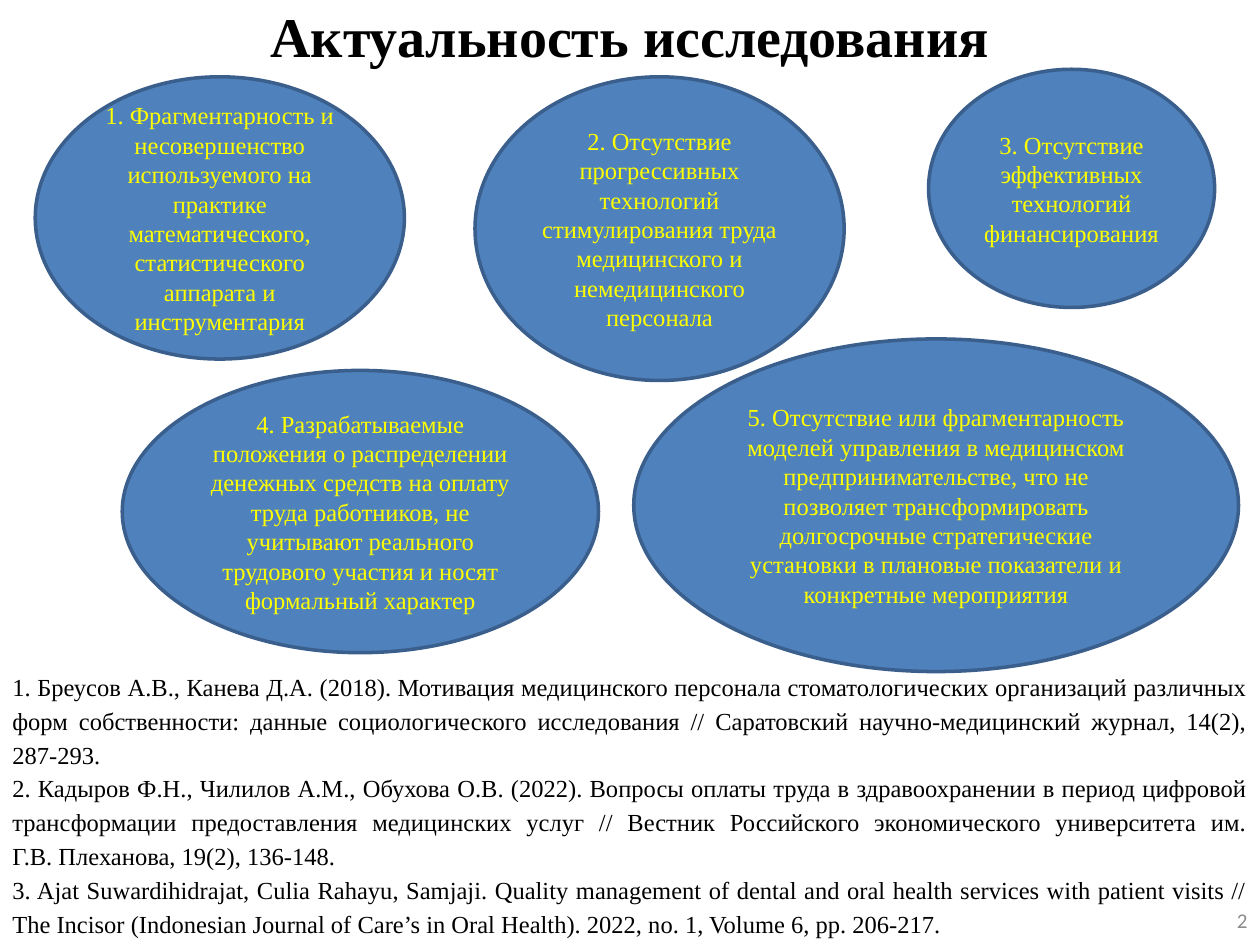
from lxml import etree
from pptx import Presentation
from pptx import util as u
from pptx.dml.color import RGBColor
from pptx.enum import shapes, text
from pptx.oxml import ns

SERIF = "Times New Roman"
TITLE = "Актуальность исследования"
PAGE = "2"

# left, top, width, height, wording; listed from back to front
OVALS = [
    (5.03, 2.69, 4.8, 2.64, "5. Отсутствие или фрагментарность моделей управления в медицинском предпринимательстве, что не позволяет трансформировать долгосрочные стратегические установки в плановые показатели и конкретные мероприятия"),
    (0.97, 2.94, 3.78, 2.24, "4. Разрабатываемые положения о распределении денежных средств на оплату труда работников, не учитывают реального трудового участия и носят формальный характер"),
    (7.37, 0.55, 2.27, 1.89, "3. Отсутствие эффективных технологий финансирования "),
    (0.28, 0.61, 2.93, 2.24, "1. Фрагментарность и несовершенство используемого на практике математического, статистического аппарата и инструментария"),
    (3.77, 0.61, 2.93, 2.41, "2. Отсутствие прогрессивных технологий стимулирования труда медицинского и немедицинского персонала"),
]

# Numbered automatically
REFS = [
    " Бреусов А.В., Канева Д.А. (2018). Мотивация медицинского персонала стоматологических организаций различных форм собственности: данные социологического исследования // Саратовский научно-медицинский журнал, 14(2), 287-293.",
    " Кадыров Ф.Н., Чилилов А.М., Обухова О.В. (2022). Вопросы оплаты труда в здравоохранении в период цифровой трансформации предоставления медицинских услуг // Вестник Российского экономического университета им.\nГ.В. Плеханова, 19(2), 136-148.",
    " Ajat Suwardihidrajat, Culia Rahayu, Samjaji. Quality management of dental and oral health services with patient visits // The Incisor (Indonesian Journal of Care’s in Oral Health). 2022, no. 1, Volume 6, pp. 206-217.",
]


def paint(hue):
    return RGBColor.from_string(hue)


def style(para, size, hue, align, face=SERIF, bold=False):
    para.alignment = align
    font = para.font
    font.name, font.size, font.bold = face, u.Pt(size), bold
    font.color.rgb = paint(hue)


def add_box(slide, area, anchor):
    frame = slide.shapes.add_textbox(*map(u.Inches, area)).text_frame
    frame.word_wrap = True
    frame.vertical_anchor = anchor
    return frame


def add_oval(slide, area, words):
    oval = slide.shapes.add_shape(
        shapes.MSO_SHAPE.FLOWCHART_CONNECTOR, *map(u.Inches, area))
    oval.shadow.inherit = False
    oval.fill.solid()
    oval.fill.fore_color.rgb = paint("4F81BD")
    oval.line.color.rgb = paint("3A5F8C")
    oval.line.width = u.Pt(2)
    frame = oval.text_frame
    frame.word_wrap = True
    frame.vertical_anchor = text.MSO_ANCHOR.MIDDLE
    para = frame.paragraphs[0]
    para.text = words
    style(para, 14, "FFFF00", text.PP_ALIGN.CENTER)


def add_refs(slide, area):
    frame = add_box(slide, area, text.MSO_ANCHOR.TOP)
    for i, words in enumerate(REFS):
        para = frame.add_paragraph() if i else frame.paragraphs[0]
        para.text = words
        para.line_spacing = 1.15
        # Automatic number with no hanging indent
        props = para._p.get_or_add_pPr()
        props.set("marL", "0")
        props.set("indent", "0")
        etree.SubElement(props, ns.qn("a:buAutoNum"), type="arabicPeriod")
        style(para, 14, "000000", text.PP_ALIGN.JUSTIFY)


def main():
    deck = Presentation()
    deck.slide_width, deck.slide_height = u.Inches(10), u.Inches(7.5)
    slide = deck.slides.add_slide(deck.slide_layouts[6])

    # Title and page number
    middle = text.MSO_ANCHOR.MIDDLE
    head = add_box(slide, (0, -0.02, 10, 0.59), middle).paragraphs[0]
    head.text = TITLE
    style(head, 32, "000000", text.PP_ALIGN.CENTER, bold=True)
    page = add_box(slide, (9.64, 7.1, 0.36, 0.4), middle).paragraphs[0]
    page.text = PAGE
    style(page, 12, "8C8C8C", text.PP_ALIGN.RIGHT, face="Calibri")

    # Reasons
    for *area, words in OVALS:
        add_oval(slide, area, words)

    # References
    add_refs(slide, (0, 5.25, 10, 2.25))
    deck.save("out.pptx")


if __name__ == "__main__":
    main()
